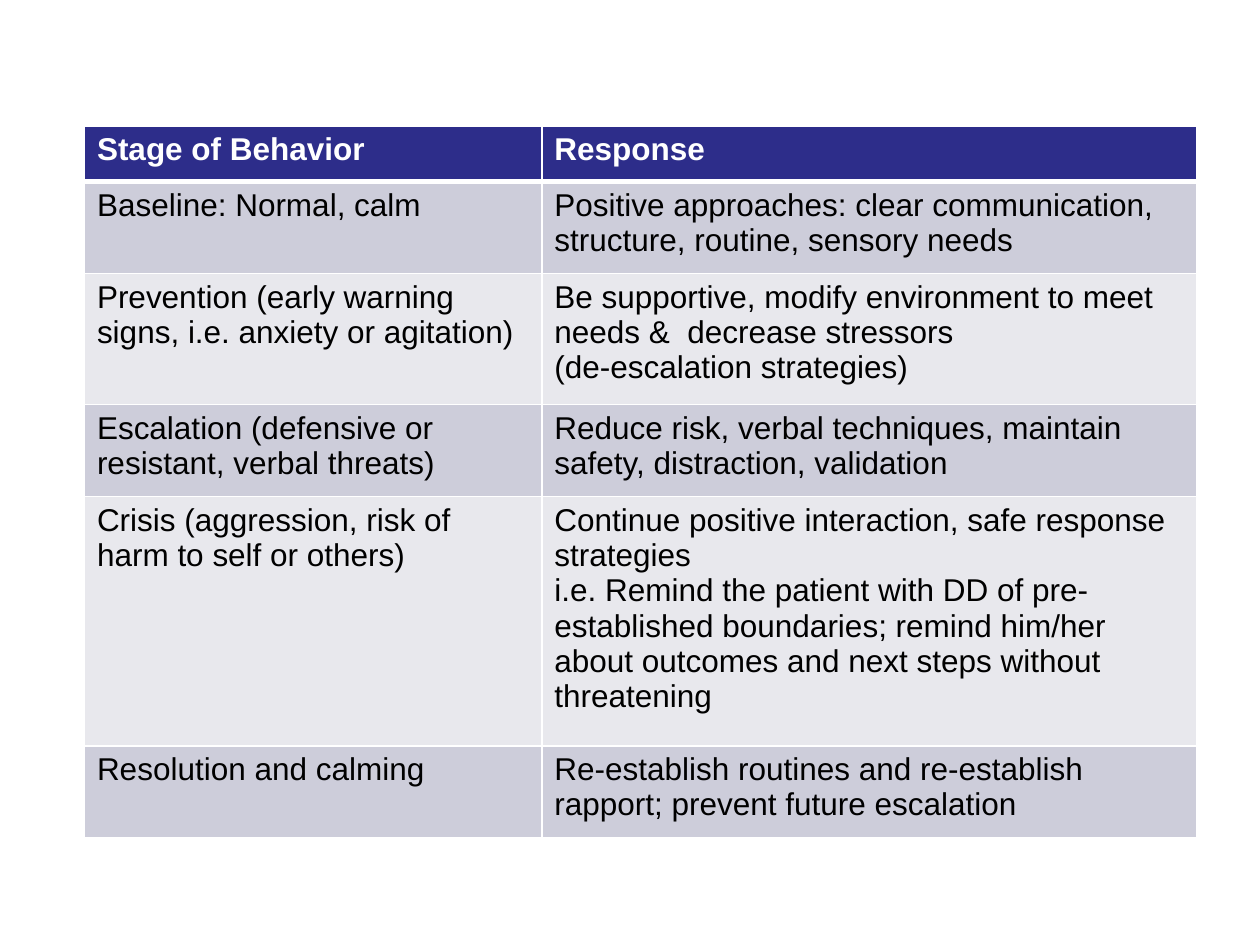
from lxml import etree
from pptx import Presentation
from pptx.dml.color import RGBColor
from pptx.oxml.ns import qn
from pptx.util import Inches, Pt

# Content: each cell is a list of paragraphs
ROWS = [
    (["Stage of Behavior"], ["Response"]),
    (["Baseline: Normal, calm"],
     ["Positive approaches: clear communication, structure, routine, sensory needs"]),
    (["Prevention (early warning signs, i.e. anxiety or agitation)"],
     ["Be supportive, modify environment to meet needs &  decrease stressors",
      "(de-escalation strategies)"]),
    (["Escalation (defensive or resistant, verbal threats)"],
     ["Reduce risk, verbal techniques, maintain safety, distraction, validation"]),
    (["Crisis (aggression, risk of harm to self or others)"],
     ["Continue positive interaction, safe response strategies",
      "i.e. Remind the patient with DD of pre-established boundaries; "
      "remind him/her about outcomes and next steps without threatening"]),
    (["Resolution and calming"],
     ["Re-establish routines and re-establish rapport; prevent future escalation"]),
]
COL_WIDTHS = [3.63, 5.2]
ROW_HEIGHTS = [0.44, 0.73, 1.04, 0.73, 1.98, 0.73]
LEFT, TOP = 0.67, 1
COLORS = {"header": "2D2D8A", "odd": "CDCDDA", "even": "E8E8ED",
          "white": "FFFFFF", "black": "000000"}


def rgb(name):
    return RGBColor.from_string(COLORS[name])


def set_borders(cell, widths):
    """Draw white lines; widths maps a side (L, R, T, B) to points."""
    tc_pr = cell._tc.get_or_add_tcPr()
    for i, (side, width) in enumerate(widths.items()):
        ln = etree.Element(qn(f"a:ln{side}"), w=str(Pt(width)))
        fill = etree.SubElement(ln, qn("a:solidFill"))
        etree.SubElement(fill, qn("a:srgbClr"), val=COLORS["white"])
        tc_pr.insert(i, ln)


def write_cell(cell, paragraphs, header):
    tf = cell.text_frame
    for i, line in enumerate(paragraphs):
        p = tf.add_paragraph() if i else tf.paragraphs[0]
        r = p.add_run()
        r.text = line
        r.font.name = "Arial"
        r.font.size = Pt(18)
        r.font.bold = header
        r.font.color.rgb = rgb("white" if header else "black")


prs = Presentation()
prs.slide_width, prs.slide_height = Inches(10), Inches(7.5)
s = prs.slides.add_slide(prs.slide_layouts[6])

# Table grid
table = s.shapes.add_table(
    len(ROWS), len(COL_WIDTHS), Inches(LEFT), Inches(TOP),
    Inches(sum(COL_WIDTHS)), Inches(sum(ROW_HEIGHTS))).table
for col, width in zip(table.columns, COL_WIDTHS):
    col.width = Inches(width)
for row, height in zip(table.rows, ROW_HEIGHTS):
    row.height = Inches(height)

# Cells: header row, then alternating bands
for i, row in enumerate(ROWS):
    band = "header" if i == 0 else "odd" if i % 2 else "even"
    for j, paragraphs in enumerate(row):
        cell = table.cell(i, j)
        write_cell(cell, paragraphs, header=i == 0)
        cell.fill.solid()
        cell.fill.fore_color.rgb = rgb(band)
        set_borders(cell, {"L": 1, "R": 1, "T": 3 if i == 1 else 1,
                           "B": 3 if i == 0 else 1})

prs.save("out.pptx")
